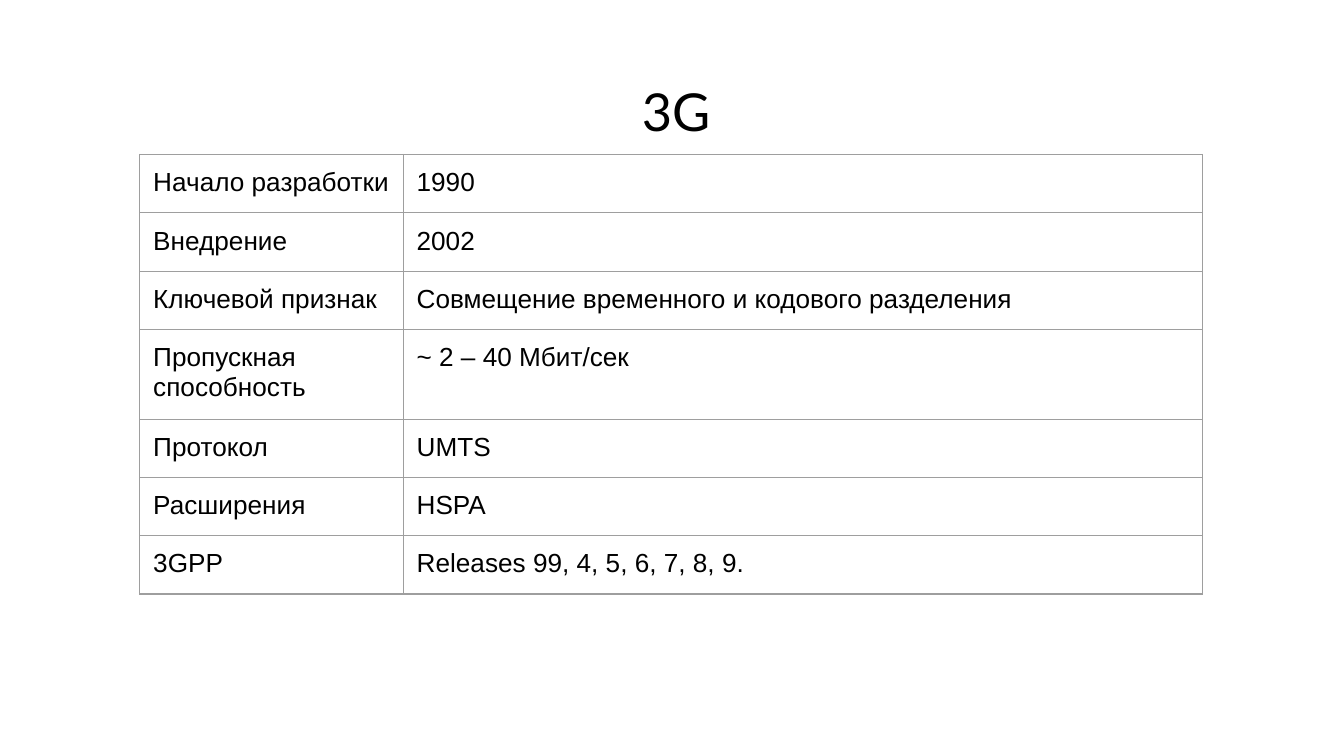
from dataclasses import dataclass

from lxml.etree import SubElement
from pptx import Presentation
from pptx.dml.color import RGBColor
from pptx.enum.text import MSO_ANCHOR, PP_ALIGN
from pptx.oxml.ns import qn
from pptx.util import Inches, Pt


@dataclass(frozen=True)
class Theme:
    """Colours, fonts and sizes of the slide."""
    ink: RGBColor = RGBColor(0, 0, 0)
    paper: RGBColor = RGBColor(255, 255, 255)
    border: str = "9E9E9E"
    border_width: float = 0.75
    title_font: str = "Lato"
    title_size: int = 28
    body_font: str = "Arial"
    body_size: int = 14
    inset: float = 0.1


THEME = Theme()

ROW_HEIGHT = 0.42
TALL_ROW_HEIGHT = 0.64

FACTS = [
    ("Начало разработки", "1990", ROW_HEIGHT),
    ("Внедрение", "2002", ROW_HEIGHT),
    ("Ключевой признак", "Совмещение временного и кодового разделения", ROW_HEIGHT),
    ("Пропускная способность", "~ 2 – 40 Мбит/сек", TALL_ROW_HEIGHT),
    ("Протокол", "UMTS", ROW_HEIGHT),
    ("Расширения", "HSPA", ROW_HEIGHT),
    ("3GPP", "Releases 99, 4, 5, 6, 7, 8, 9.", ROW_HEIGHT),
]


def set_insets(holder):
    """Give a cell or text frame the same inset on every side."""
    for side in ("left", "right", "top", "bottom"):
        setattr(holder, f"margin_{side}", Inches(THEME.inset))


def style_paragraph(paragraph, font_name, size):
    """Set the font of a whole paragraph."""
    font = paragraph.font
    font.name, font.size = font_name, Pt(size)
    font.color.rgb = THEME.ink


def draw_borders(cell):
    """Outline all four sides of a cell."""
    properties = cell._tc.get_or_add_tcPr()
    for side in ("lnL", "lnR", "lnT", "lnB"):
        line = SubElement(properties, qn(f"a:{side}"), w=str(Pt(THEME.border_width)))
        solid = SubElement(line, qn("a:solidFill"))
        SubElement(solid, qn("a:srgbClr"), val=THEME.border)


def add_title(slide, text, left, top, width, height):
    """Place the centred heading in the given box."""
    box = [Inches(length) for length in (left, top, width, height)]
    frame = slide.shapes.add_textbox(*box).text_frame
    frame.word_wrap = True
    frame.vertical_anchor = MSO_ANCHOR.TOP
    set_insets(frame)
    heading = frame.paragraphs[0]
    heading.text = text
    heading.alignment = PP_ALIGN.CENTER
    style_paragraph(heading, THEME.title_font, THEME.title_size)


def add_facts_table(slide, facts, left, top, width, label_width):
    """Place the table of labels and values from the given corner."""
    height = sum(row_height for *_, row_height in facts)
    box = [Inches(length) for length in (left, top, width, height)]
    table = slide.shapes.add_table(len(facts), 2, *box).table
    table.first_row = table.horz_banding = False
    table.columns[0].width = Inches(label_width)
    table.columns[1].width = Inches(width - label_width)
    for row, (*texts, row_height) in enumerate(facts):
        table.rows[row].height = Inches(row_height)
        for column, text in enumerate(texts):
            cell = table.cell(row, column)
            cell.text = text
            set_insets(cell)
            style_paragraph(cell.text_frame.paragraphs[0], THEME.body_font, THEME.body_size)
            draw_borders(cell)
            cell.fill.background()


def main():
    """Build the slide and save it."""
    deck = Presentation()
    deck.slide_width = Inches(10)
    deck.slide_height = deck.slide_width * 9 // 16
    slide = deck.slides.add_slide(deck.slide_layouts[6])
    background = slide.background.fill
    background.solid()
    background.fore_color.rgb = THEME.paper
    add_title(slide, "3G", 0.4, 0.49, 9.26, 0.63)
    add_facts_table(slide, FACTS, 1.04, 1.15, 7.91, label_width=1.96)
    deck.save("out.pptx")


if __name__ == "__main__":
    main()
